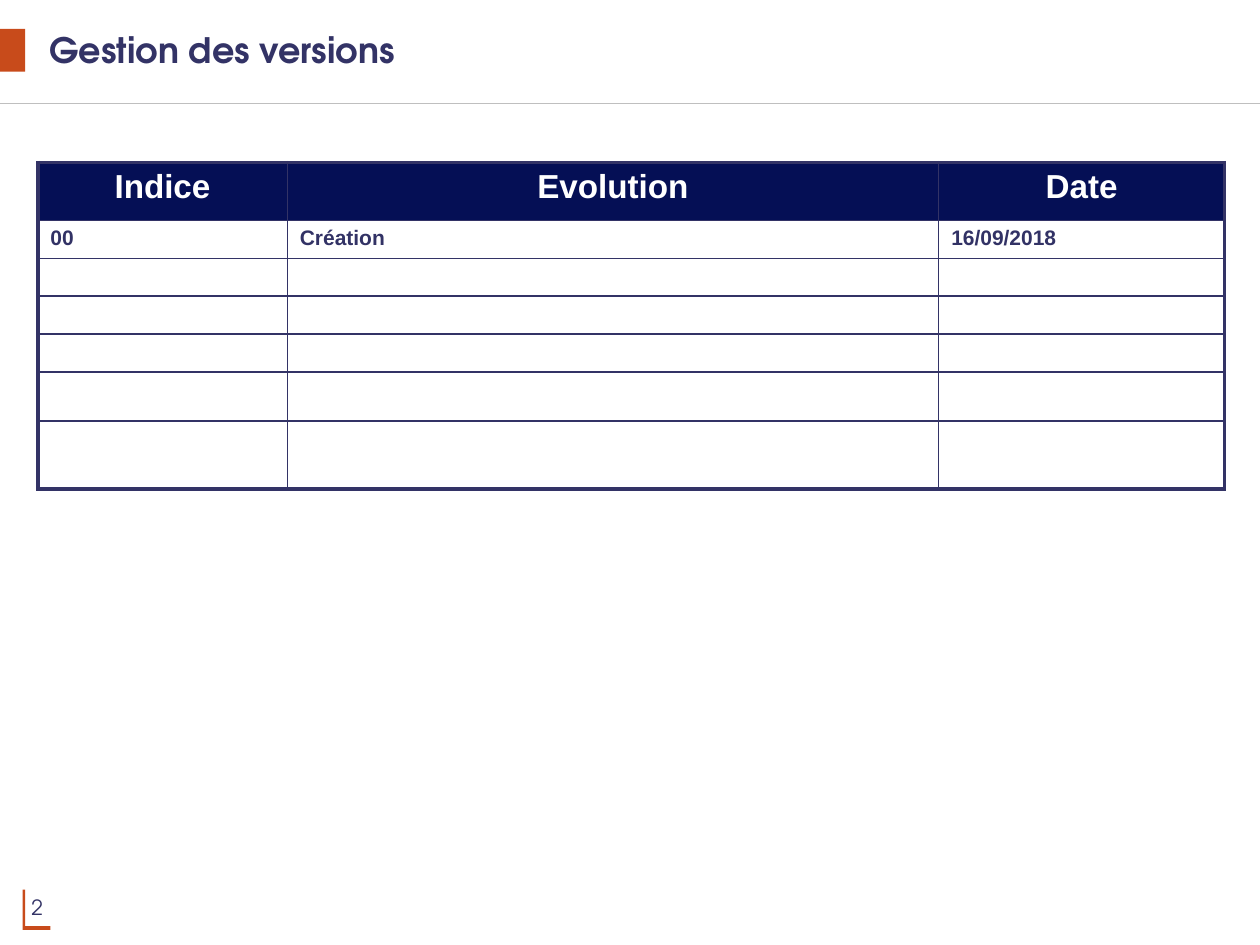
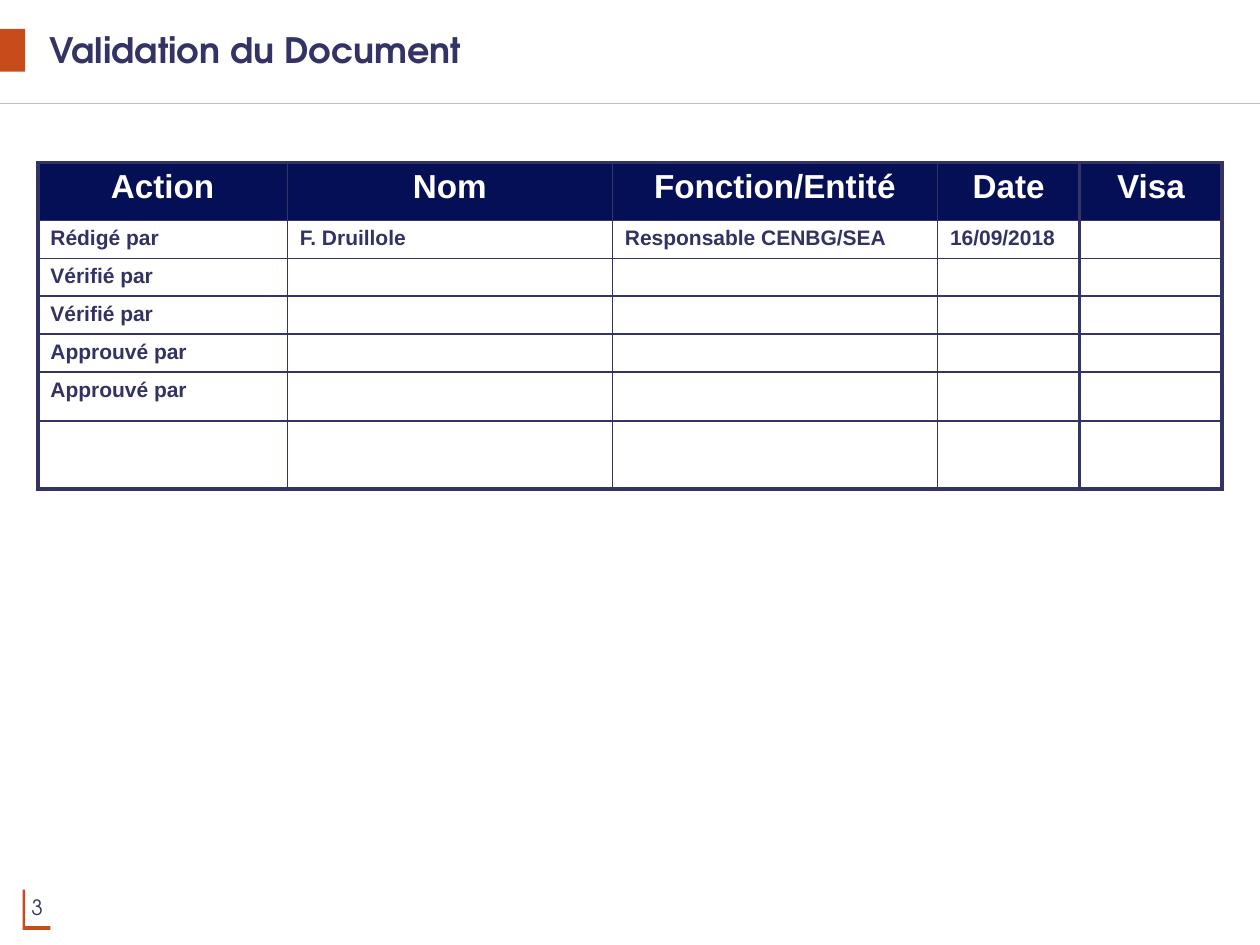
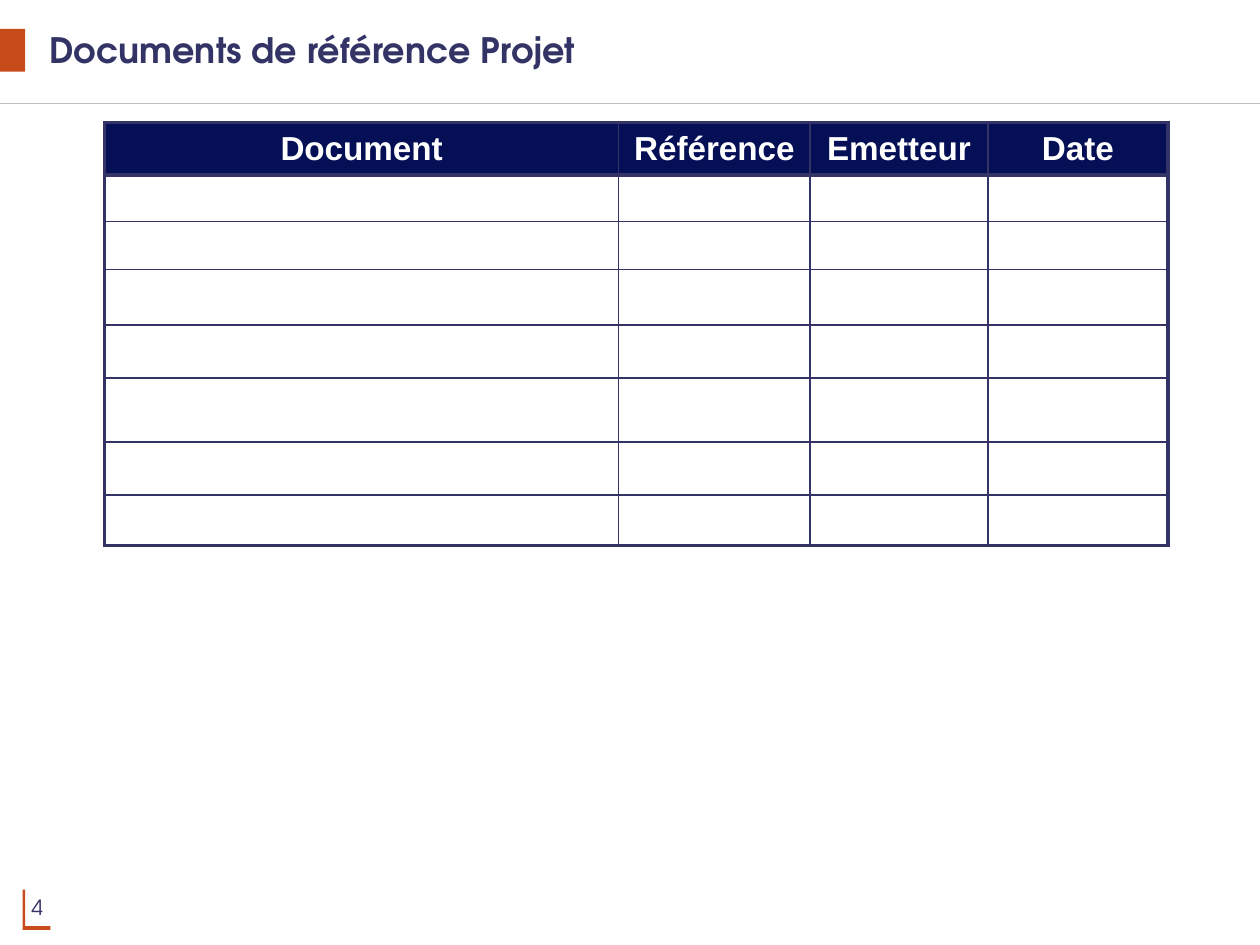
"""Build three project document slides, each with a title and a ruled table."""
from dataclasses import dataclass
from itertools import zip_longest

from lxml import etree
from pptx import Presentation
from pptx.dml.color import RGBColor
from pptx.enum import shapes, text
from pptx.oxml.ns import qn
from pptx.util import Inches, Pt

NAVY = RGBColor(0x33, 0x33, 0x66)
BODY = RGBColor(0x32, 0x32, 0x65)
HEADER = RGBColor(0x05, 0x0F, 0x55)
WHITE = RGBColor(0xFF, 0xFF, 0xFF)
ORANGE = RGBColor(0xC8, 0x4B, 0x1B)
GREY = RGBColor(0xBF, 0xBF, 0xBF)
TITLE_FONT = "TeX Gyre Adventor"
TABLE_FONT = "Arial"
THIN, THICK = Pt(1), Pt(2.25)
BODY_SIZE = Pt(12)
CORNER = [(0.2, 7.06), (0.18, 7.06), (0.18, 7.38), (0.4, 7.38), (0.4, 7.35), (0.2, 7.35)]
FORM_ROWS = (0.46, 0.3, 0.29, 0.3, 0.3, 0.39, 0.54)


@dataclass(frozen=True)
class TableSlide:
    title: str
    left: float
    top: float
    cols: tuple[float, ...]
    rows: tuple[float, ...]
    header: tuple[str, ...]
    body: tuple[tuple[str, ...], ...] = ()
    thick_cols: tuple[int, ...] = ()
    thick_rows: tuple[int, ...] = ()
    header_anchor: text.MSO_ANCHOR = text.MSO_ANCHOR.TOP


SLIDES = (
    TableSlide("Gestion des versions", 0.3, 1.29, (1.98, 5.17, 2.27), FORM_ROWS,
               ("Indice", "Evolution", "Date"), (("00", "Création", "16/09/2018"),)),
    TableSlide("Validation du Document", 0.3, 1.29, (1.98, 2.58, 2.58, 1.13, 1.13), FORM_ROWS,
               ("Action", "Nom", "Fonction/Entité", "Date", "Visa"),
               (("Rédigé par", "F. Druillole", "Responsable CENBG/SEA", "16/09/2018"),
                ("Vérifié par",), ("Vérifié par",), ("Approuvé par",), ("Approuvé par",)),
               thick_cols=(4,)),
    TableSlide("Documents de référence Projet", 0.83, 0.97, (4.08, 1.52, 1.41, 1.43),
               (0.42, 0.37, 0.38, 0.44, 0.42, 0.51, 0.42, 0.4),
               ("Document", "Référence", "Emetteur", "Date"),
               thick_rows=(1,), header_anchor=text.MSO_ANCHOR.MIDDLE),
)


def style(p, font: str, size: int, color: RGBColor, bold: bool = False) -> None:
    """Set the font of a whole paragraph."""
    p.font.name, p.font.size, p.font.bold = font, size, bold
    p.font.color.rgb = color


def paint(sp) -> None:
    """Give a shape the flat accent colour."""
    sp.shadow.inherit = False
    sp.fill.solid()
    sp.fill.fore_color.rgb = ORANGE
    sp.line.fill.background()


def add_frame(s, number: int) -> None:
    """Draw the page number, rule, title marker and corner bracket."""
    sp = s.shapes.add_textbox(Inches(0.15), Inches(7), Inches(0.86), Inches(0.4))
    tf = sp.text_frame
    tf.word_wrap = True
    tf.vertical_anchor = text.MSO_ANCHOR.MIDDLE
    tf.text = str(number)
    style(tf.paragraphs[0], TITLE_FONT, Pt(12), NAVY)

    rule = s.shapes.add_connector(shapes.MSO_CONNECTOR.STRAIGHT, Inches(-0.01), Inches(0.82),
                                  Inches(10), Inches(0.82))
    rule.line.color.rgb = GREY
    rule.line.width = Pt(0.75)
    etree.SubElement(rule._element.spPr, qn("a:effectLst"))

    paint(s.shapes.add_shape(shapes.MSO_SHAPE.RECTANGLE, 0, Inches(0.23),
                             Inches(0.2), Inches(0.34)))
    points = [(Inches(x), Inches(y)) for x, y in CORNER]
    outline = s.shapes.build_freeform(*points[0])
    outline.add_line_segments(points[1:], close=True)
    paint(outline.convert_to_shape())


def set_title(s, title: str) -> None:
    """Place and format the title placeholder."""
    sp = s.shapes.title
    sp.left, sp.top, sp.width, sp.height = Inches(0.29), 0, Inches(9.49), Inches(0.82)
    tf = sp.text_frame
    tf.text = title
    tf.auto_size = text.MSO_AUTO_SIZE.NONE
    tf.vertical_anchor = text.MSO_ANCHOR.MIDDLE
    p = tf.paragraphs[0]
    p.alignment = text.PP_ALIGN.LEFT
    p.line_spacing = 0.9
    style(p, TITLE_FONT, Pt(20), NAVY, True)


def set_borders(cell, row: int, col: int, spec: TableSlide) -> None:
    """Rule the four sides of a cell, thick on the outer and chosen edges."""
    thick_cols = {0, len(spec.cols), *spec.thick_cols}
    thick_rows = {0, len(spec.rows), *spec.thick_rows}
    sides = {"L": col in thick_cols, "R": col + 1 in thick_cols,
             "T": row in thick_rows, "B": row + 1 in thick_rows}
    tcPr = cell._tc.get_or_add_tcPr()
    for side, thick in sides.items():
        ln = etree.SubElement(tcPr, qn(f"a:ln{side}"), w=str(THICK if thick else THIN))
        fill = etree.SubElement(ln, qn("a:solidFill"))
        etree.SubElement(fill, qn("a:srgbClr"), val=str(NAVY))


def fill_cell(cell, value: str, is_header: bool, anchor: text.MSO_ANCHOR) -> None:
    """Write and format the text and background of a cell."""
    p = cell.text_frame.paragraphs[0]
    if value:
        p.text = value
    else:
        etree.SubElement(p._p, qn("a:endParaRPr"), sz=str(BODY_SIZE.centipoints))
    if is_header:
        cell.fill.solid()
        cell.fill.fore_color.rgb = HEADER
        cell.vertical_anchor = anchor
        p.alignment = text.PP_ALIGN.CENTER
        style(p, TABLE_FONT, Pt(19), WHITE, True)
    else:
        cell.fill.background()
        style(p, TABLE_FONT, BODY_SIZE, BODY, True)


def add_table(s, spec: TableSlide) -> None:
    """Draw the ruled table of a slide."""
    table = s.shapes.add_table(len(spec.rows), len(spec.cols), Inches(spec.left),
                               Inches(spec.top), Inches(sum(spec.cols)),
                               Inches(sum(spec.rows))).table
    table.first_row = table.horz_banding = False
    for column, width in zip(table.columns, spec.cols):
        column.width = Inches(width)
    lines = zip_longest(spec.rows, (spec.header, *spec.body), fillvalue=())
    for i, (height, values) in enumerate(lines):
        table.rows[i].height = Inches(height)
        for j in range(len(spec.cols)):
            cell = table.cell(i, j)
            set_borders(cell, i, j, spec)
            fill_cell(cell, values[j] if j < len(values) else "", i == 0, spec.header_anchor)


def main() -> None:
    """Build and save the presentation."""
    prs = Presentation()
    prs.slide_width, prs.slide_height = Inches(10), Inches(7.5)
    for number, spec in enumerate(SLIDES, start=2):
        s = prs.slides.add_slide(prs.slide_layouts[5])
        add_frame(s, number)
        set_title(s, spec.title)
        add_table(s, spec)
    prs.save("out.pptx")


if __name__ == "__main__":
    main()
